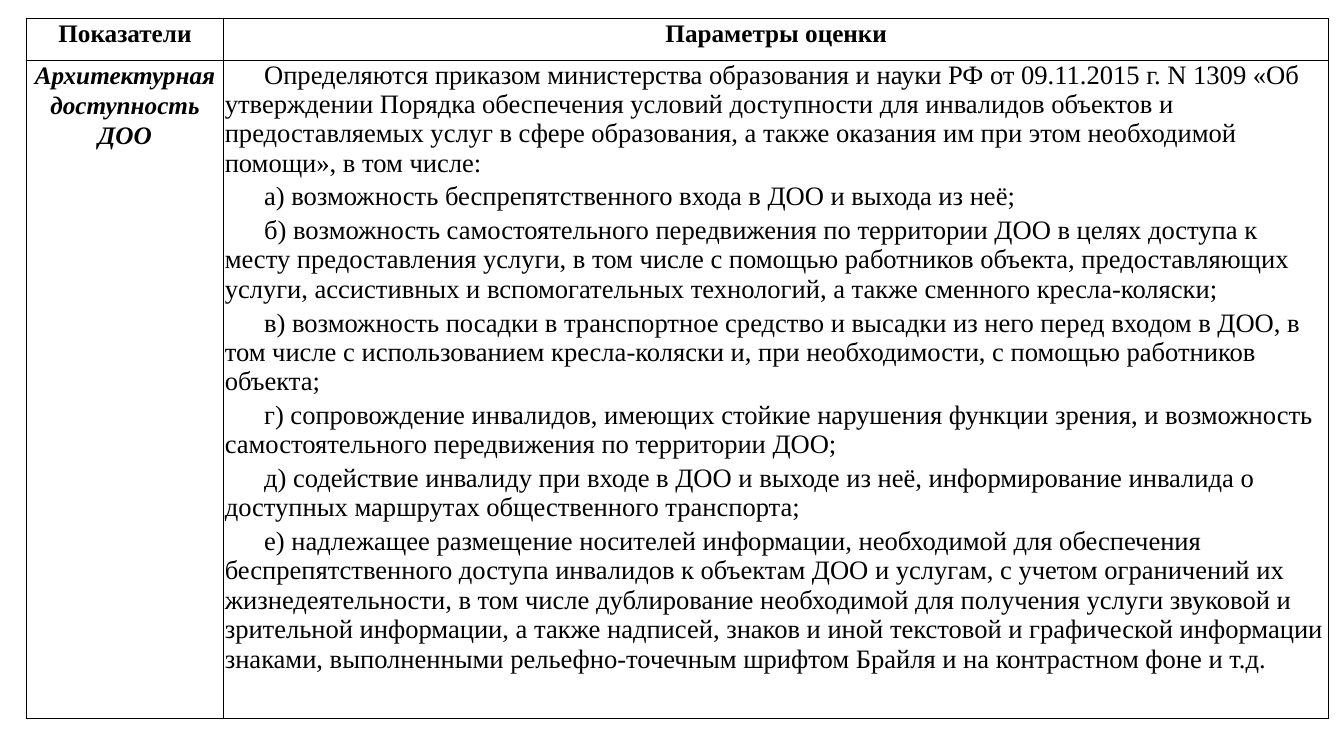
from lxml import etree
from pptx import Presentation, util as u
from pptx.dml.color import RGBColor
from pptx.enum import text
from pptx.oxml.ns import qn

COLORS = {"ink": "000000", "paper": "FFFFFF"}
HEADERS = ["Показатели", "Параметры оценки"]
INDICATOR = "Архитектурная доступность ДОО"
CRITERIA = [
    "Определяются приказом министерства образования и науки РФ от 09.11.2015 г. N 1309 «Об утверждении Порядка обеспечения условий доступности для инвалидов объектов и предоставляемых услуг в сфере образования, а также оказания им при этом необходимой помощи», в том числе:",
    "а) возможность беспрепятственного входа в ДОО и выхода из неё;",
    "б) возможность самостоятельного передвижения по территории ДОО в целях доступа к месту предоставления услуги, в том числе с помощью работников объекта, предоставляющих услуги, ассистивных и вспомогательных технологий, а также сменного кресла-коляски;",
    "в) возможность посадки в транспортное средство и высадки из него перед входом в ДОО, в том числе с использованием кресла-коляски и, при необходимости, с помощью работников объекта;",
    "г) сопровождение инвалидов, имеющих стойкие нарушения функции зрения, и возможность самостоятельного передвижения по территории ДОО;",
    "д) содействие инвалиду при входе в ДОО и выходе из неё, информирование инвалида о доступных маршрутах общественного транспорта;",
    "е) надлежащее размещение носителей информации, необходимой для обеспечения беспрепятственного доступа инвалидов к объектам ДОО и услугам, с учетом ограничений их жизнедеятельности, в том числе дублирование необходимой для получения услуги звуковой и зрительной информации, а также надписей, знаков и иной текстовой и графической информации знаками, выполненными рельефно-точечным шрифтом Брайля и на контрастном фоне и т.д.",
]


class SlideBuilder:
    font_name = "Times New Roman"

    def __init__(self, presentation):
        self.slide = presentation.slides.add_slide(presentation.slide_layouts[6])

    def table(self, left, top, widths, heights):
        frame = self.slide.shapes.add_table(
            len(heights), len(widths), u.Inches(left), u.Inches(top),
            u.Inches(sum(widths)), u.Inches(sum(heights)))
        table = frame.table
        table.horz_banding = False
        for column, width in zip(table.columns, widths):
            column.width = u.Inches(width)
        for row, height in zip(table.rows, heights):
            row.height = u.Inches(height)
        for cell in table.iter_cells():
            self.style_cell(cell)
        return table

    def style_cell(self, cell):
        cell.margin_left = cell.margin_right = u.Inches(0.01)
        cell.margin_top = cell.margin_bottom = 0
        properties = cell._tc.get_or_add_tcPr()
        for side in ("lnL", "lnR", "lnT", "lnB"):
            line = etree.SubElement(properties, qn(f"a:{side}"), w=str(u.Pt(1)))
            fill = etree.SubElement(line, qn("a:solidFill"))
            etree.SubElement(fill, qn("a:srgbClr"), val=COLORS["ink"])
        cell.fill.solid()
        cell.fill.fore_color.rgb = RGBColor.from_string(COLORS["paper"])

    def set_text(self, paragraph, words, size, bold=False, italic=False):
        paragraph.text = words
        font = paragraph.font
        font.name = self.font_name
        font.size = u.Pt(size)
        font.bold = bold
        font.italic = italic
        font.color.rgb = RGBColor.from_string(COLORS["ink"])

    def heading(self, cell, words, italic=False):
        paragraph = cell.text_frame.paragraphs[0]
        self.set_text(paragraph, words, 18, bold=True, italic=italic)
        paragraph.alignment = text.PP_ALIGN.CENTER
        paragraph.line_spacing = 1.07

    def criteria(self, cell, items):
        frame = cell.text_frame
        for index, words in enumerate(items):
            paragraph = frame.add_paragraph() if index else frame.paragraphs[0]
            self.set_text(paragraph, words, 19)
            paragraph.space_before = u.Pt(3 if index else 0)
            properties = paragraph._p.get_or_add_pPr()
            properties.set("marL", "0")
            properties.set("indent", str(u.Inches(0.39)))


def main():
    presentation = Presentation()
    presentation.slide_width = u.Inches(13.33)
    presentation.slide_height = u.Inches(7.5)
    builder = SlideBuilder(presentation)
    table = builder.table(0.26, 0.18, [1.96, 10.96], [0.42, 6.53])
    for column, words in enumerate(HEADERS):
        builder.heading(table.cell(0, column), words)
    builder.heading(table.cell(1, 0), INDICATOR, italic=True)
    builder.criteria(table.cell(1, 1), CRITERIA)
    presentation.save("out.pptx")


if __name__ == "__main__":
    main()
